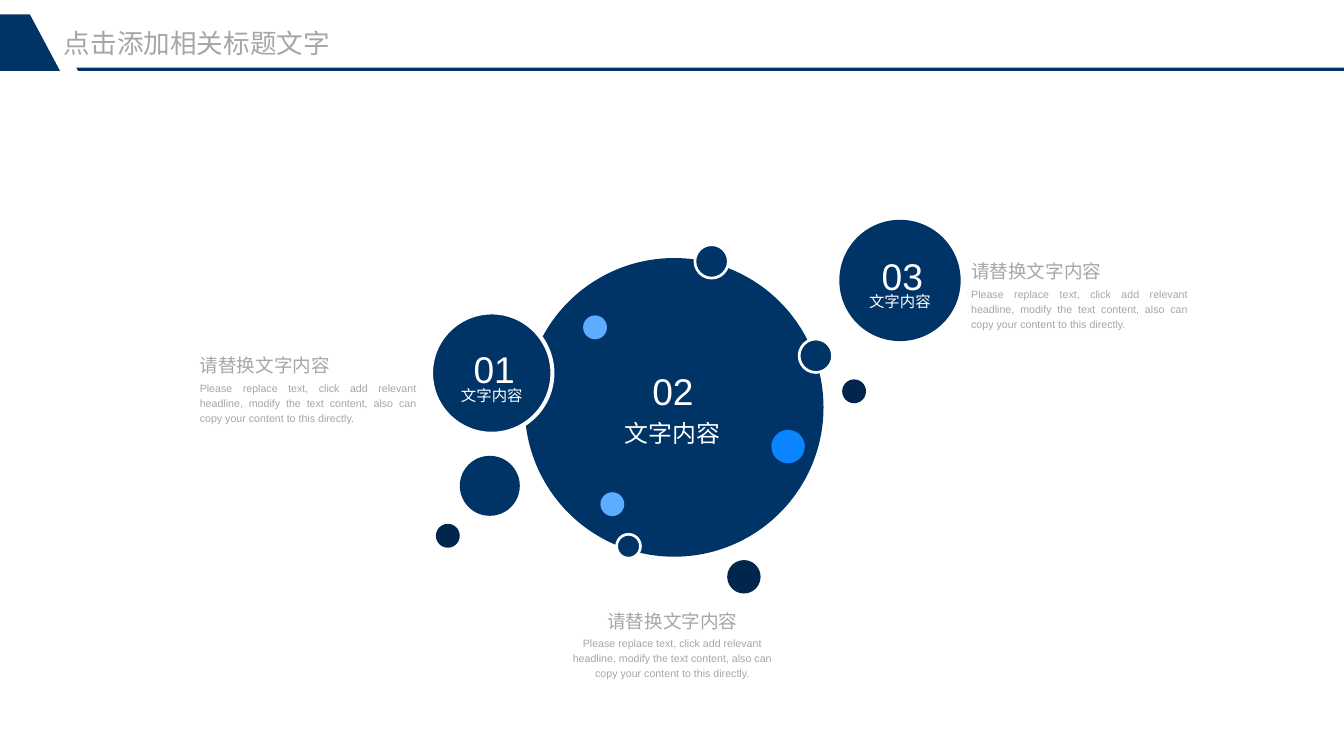
from pptx import Presentation
from pptx.dml.color import RGBColor
from pptx.enum.shapes import MSO_SHAPE as SHAPE
from pptx.enum.text import MSO_ANCHOR as ANCHOR, MSO_AUTO_SIZE as AUTO, PP_ALIGN as ALIGN
from pptx.util import Pt

SLIDE_W, SLIDE_H = 1012.32, 569.52
FONT = "Arial"
COLORS = {
    "navy": "003366",
    "dark": "00264D",
    "bright": "0A85FF",
    "light": "5CADFF",
    "white": "FFFFFF",
    "grey": "A6A6A6",
}

TITLE = "点击添加相关标题文字"
HEADLINE = "请替换文字内容"
BODY = ("Please replace text, click add relevant headline, modify the text "
        "content, also can copy your content to this directly.")
LABEL = "文字内容"

# Diameters
HUGE, LARGE, MEDIUM, SMALL, TINY = 225, 91.4, 45.2, 25.2, 18

# left, top, diameter, fill, white outline width (back to front)
CIRCLES = [
    (395.3, 194.4, HUGE, "navy", 0),
    (523.4, 184.3, SMALL, "navy", 2),
    (464.4, 402.5, TINY, "navy", 2),
    (634.3, 285.8, TINY, "dark", 0),
    (547.7, 421.9, SMALL, "dark", 0),
    (439.2, 237.6, TINY, "light", 0),
    (324.7, 235.4, LARGE, "navy", 3),
    (581, 323.8, SMALL, "bright", 0),
    (346.3, 343.4, MEDIUM, "navy", 0),
    (632.2, 165.6, LARGE, "navy", 0),
    (601.9, 255.4, SMALL, "navy", 2),
    (328.3, 394.6, TINY, "dark", 0),
    (452.2, 370.8, TINY, "light", 0),
]

# number, number left, number top, label left, label top, label height, label size
BADGES = [
    ("01", 348.5, 254.2, 330.5, 288.7, 15.1, 11.6),
    ("02", 483.1, 270.7, 466.6, 311.8, 23.8, 18),
    ("03", 655.9, 184.3, 637.9, 218.2, 15.1, 11.6),
]
NUMBER_W, NUMBER_H, LABEL_W = 47.5, 36.7, 79.9

# left, top, alignment
CALLOUTS = [
    (150.5, 263.5, ALIGN.JUSTIFY),
    (424.8, 455.8, ALIGN.CENTER),
    (731.5, 192.7, ALIGN.JUSTIFY),
]
CALLOUT_W, HEADLINE_H, BODY_H, BODY_DROP = 163.4, 20.2, 33.8, 22.1

HEADER_SHAPES = [
    [(57.6, 51), (SLIDE_W, 51), (SLIDE_W, 53.4), (58.8, 53.4)],
    [(22.5, 10.8), (45.2, 53.4), (0, 53.4), (0, 10.8)],
]


def rgb(name):
    return RGBColor.from_string(COLORS[name])


def paint(sp, fill, outline=0):
    sp.shadow.inherit = False
    sp.fill.solid()
    sp.fill.fore_color.rgb = rgb(fill)
    if outline:
        sp.line.color.rgb = rgb("white")
        sp.line.width = Pt(outline)
    else:
        sp.line.fill.background()


def add_circle(s, left, top, size, fill, outline):
    sp = s.shapes.add_shape(SHAPE.OVAL, Pt(left), Pt(top), Pt(size), Pt(size))
    paint(sp, fill, outline)


def add_polygon(s, points):
    start, *rest = [(Pt(x), Pt(y)) for x, y in points]
    builder = s.shapes.build_freeform(*start)
    builder.add_line_segments(rest)
    paint(builder.convert_to_shape(), "navy")


def add_text(s, text, box, size, color, align, spacing=1.2, anchor=ANCHOR.TOP, spaced=False):
    """Add a one-paragraph text box; spaced adds gaps around the paragraph."""
    tf = s.shapes.add_textbox(*map(Pt, box)).text_frame
    tf.margin_left = tf.margin_top = tf.margin_right = tf.margin_bottom = 0
    tf.word_wrap = True
    tf.auto_size = AUTO.SHAPE_TO_FIT_TEXT
    tf.vertical_anchor = anchor
    p = tf.paragraphs[0]
    p.text = text
    p.alignment = align
    p.line_spacing = spacing
    if spaced:
        p.space_before, p.space_after = Pt(size * 0.2), Pt(6)
    font = p.runs[0].font
    font.name, font.size = FONT, Pt(size)
    font.color.rgb = rgb(color)


def main():
    prs = Presentation()
    prs.slide_width, prs.slide_height = Pt(SLIDE_W), Pt(SLIDE_H)
    s = prs.slides.add_slide(prs.slide_layouts[6])

    for circle in CIRCLES:
        add_circle(s, *circle)

    for number, x, y, label_x, label_y, label_h, label_size in BADGES:
        add_text(s, LABEL, (label_x, label_y, LABEL_W, label_h), label_size,
                 "white", ALIGN.CENTER, anchor=ANCHOR.MIDDLE)
        add_text(s, number, (x, y, NUMBER_W, NUMBER_H), 28, "white", ALIGN.CENTER)

    for x, y, align in CALLOUTS:
        add_text(s, BODY, (x, y + BODY_DROP, CALLOUT_W, BODY_H), 8, "grey", align, spaced=True)
        add_text(s, HEADLINE, (x, y, CALLOUT_W, HEADLINE_H), 14, "grey", align)

    for points in HEADER_SHAPES:
        add_polygon(s, points)
    add_text(s, TITLE, (48.2, 20.2, 241.2, 24.5), 20, "grey", ALIGN.LEFT,
             spacing=1.0, spaced=True)

    prs.save("out.pptx")


if __name__ == "__main__":
    main()
